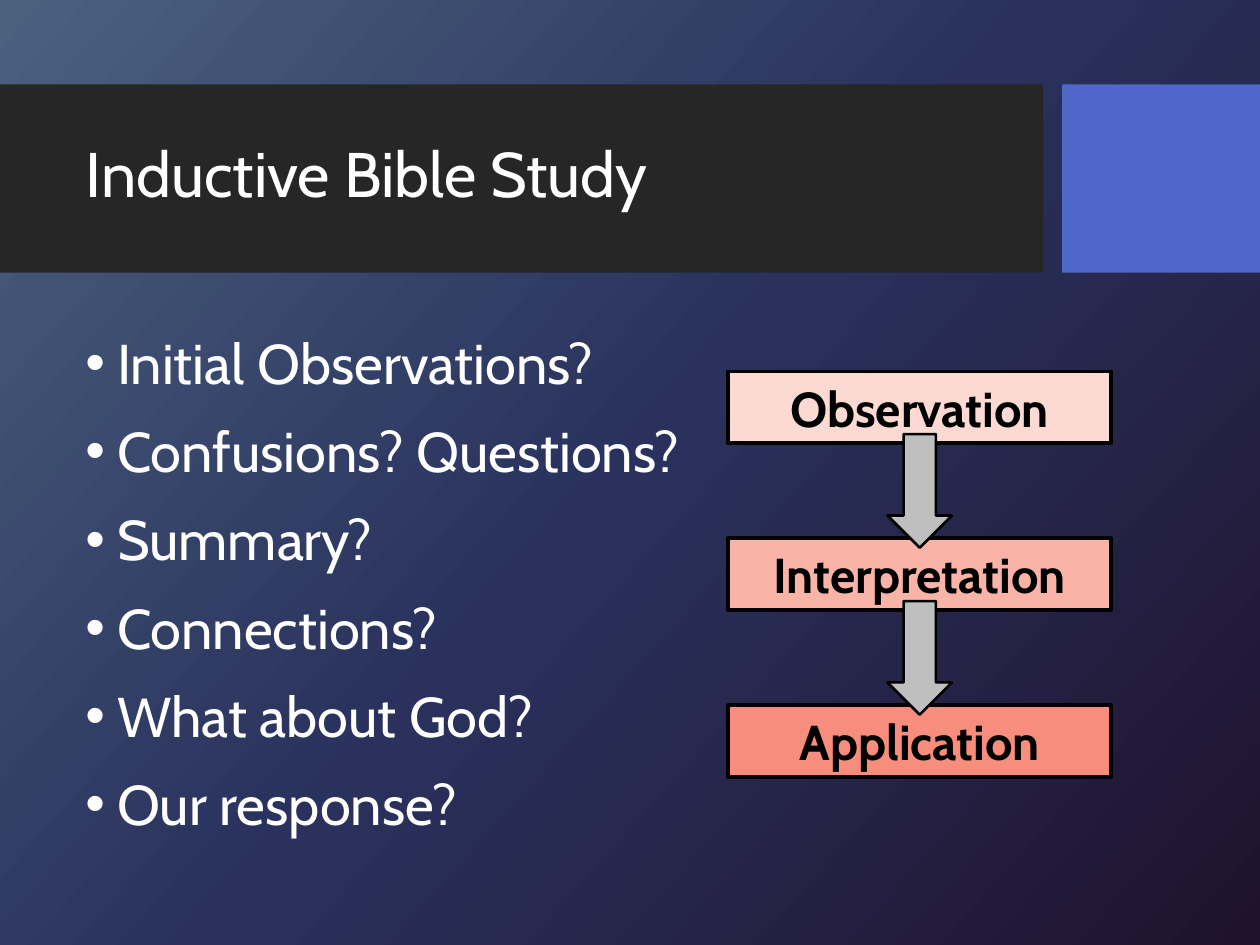
from copy import deepcopy

from pptx import Presentation
from pptx.dml.color import RGBColor
from pptx.enum.shapes import MSO_SHAPE
from pptx.enum.text import MSO_ANCHOR, PP_ALIGN
from pptx.oxml.ns import qn
from pptx.util import Cm, Pt
from lxml.etree import SubElement

FONT = "Cabin"
WHITE = RGBColor(0xFF, 0xFF, 0xFF)
BLACK = RGBColor(0, 0, 0)
DARK = RGBColor(0x26, 0x26, 0x26)
BLUE = RGBColor(0x4E, 0x67, 0xC8)
GRAY = RGBColor(0xBF, 0xBF, 0xBF)
SKY = [(0, RGBColor(0x4B, 0x61, 0x7E)),
       (0.5, RGBColor(0x29, 0x31, 0x5C)),
       (1, RGBColor(0x20, 0x12, 0x2D))]

POINTS = ["Initial Observations?", "Confusions? Questions?", "Summary?",
          "Connections?", "What about God?", "Our response?"]
STEPS = [("Observation", RGBColor(0xFC, 0xD9, 0xD3)),
         ("Interpretation", RGBColor(0xF9, 0xB3, 0xA7)),
         ("Application", RGBColor(0xF7, 0x8D, 0x7C))]


def style(para, size, color, bold=False):
    for run in para.runs:
        font = run.font
        font.name, font.size, font.bold = FONT, Pt(size), bold
        font.color.rgb = color


def block(slide, kind, box, fill, width=0):
    shape = slide.shapes.add_shape(kind, *[Cm(n) for n in box])
    shape.shadow.inherit = False
    shape.fill.solid()
    shape.fill.fore_color.rgb = fill
    if width:
        shape.line.color.rgb = BLACK
        shape.line.width = Pt(width)
    else:
        shape.line.fill.background()
    return shape


def backdrop(slide):
    fill = slide.background.fill
    fill.gradient()
    fill.gradient_angle = 318
    # The default gradient has two stops; add a third
    stops = next(slide.element.iter(qn("a:gsLst")))
    stops.append(deepcopy(stops[-1]))
    for stop, (place, color) in zip(fill.gradient_stops, SKY):
        stop.position = place
        stop.color.rgb = color


def header(slide, left, top, width, height):
    # Dark band and blue end block
    end, gap = 3.99, 0.38
    band = width - end - gap
    block(slide, MSO_SHAPE.RECTANGLE, (left, top, band, height), DARK)
    block(slide, MSO_SHAPE.RECTANGLE,
          (left + width - end, top, end, height), BLUE)

    # Title, brought in front of the band
    title = slide.shapes.title
    title.left, title.top = Cm(left + 1.47), Cm(top + 0.38)
    title.width, title.height = Cm(19.15), Cm(3)
    frame = title.text_frame
    frame.text = "Inductive Bible Study"
    frame.vertical_anchor = MSO_ANCHOR.MIDDLE
    para = frame.paragraphs[0]
    para.alignment = PP_ALIGN.LEFT
    para.line_spacing = 0.9
    style(para, 36, WHITE)
    slide.shapes.element.append(title.element)


def bullets(slide, left, top, width, height):
    box = slide.shapes.add_textbox(Cm(left), Cm(top), Cm(width), Cm(height))
    frame = box.text_frame
    frame.word_wrap = True
    for i, text in enumerate(POINTS):
        para = frame.add_paragraph() if i else frame.paragraphs[0]
        para.text = text
        para.space_after = Pt(12)
        props = para._p.get_or_add_pPr()
        props.set("marL", str(Cm(0.64)))
        props.set("indent", str(-Cm(0.64)))
        SubElement(props, qn("a:buFont"), typeface="Arial")
        SubElement(props, qn("a:buChar"), char="•")
        style(para, 32, WHITE)


def flow(slide, left, top, width, height):
    tall = 1.45
    pitch = (height - tall) / (len(STEPS) - 1)

    # Step boxes
    for i, (text, color) in enumerate(STEPS):
        step = block(slide, MSO_SHAPE.RECTANGLE,
                     (left, top + i * pitch, width, tall), color, 2.25)
        frame = step.text_frame
        frame.text = text
        frame.vertical_anchor = MSO_ANCHOR.MIDDLE
        frame.paragraphs[0].alignment = PP_ALIGN.CENTER
        style(frame.paragraphs[0], 28, BLACK, True)

    # Arrows, each centred between two boxes and turned to point down
    long, thick = 2.29, 1.3
    for i in range(len(STEPS) - 1):
        mid = top + tall / 2 + (i + 0.5) * pitch
        arrow = block(slide, MSO_SHAPE.RIGHT_ARROW,
                      (left + (width - long) / 2, mid - thick / 2,
                       long, thick), GRAY, 1.5)
        arrow.rotation = 90


def main():
    deck = Presentation()
    deck.slide_width, deck.slide_height = Cm(25.4), Cm(19.05)
    slide = deck.slides.add_slide(deck.slide_layouts[5])
    backdrop(slide)
    header(slide, 0, 1.7, 25.4, 3.8)
    bullets(slide, 1.47, 6.5, 20.93, 11.1)
    flow(slide, 14.68, 7.49, 7.72, 8.18)
    deck.save("out.pptx")


if __name__ == "__main__":
    main()
